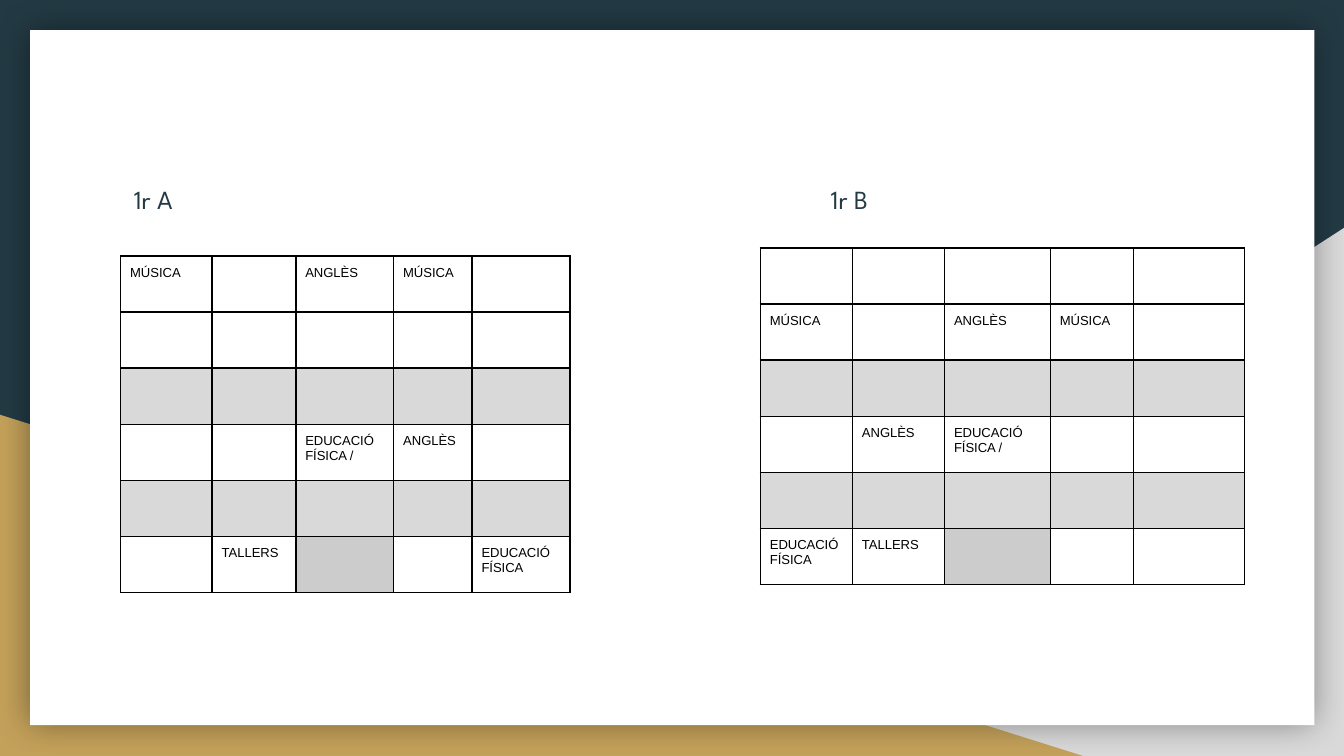
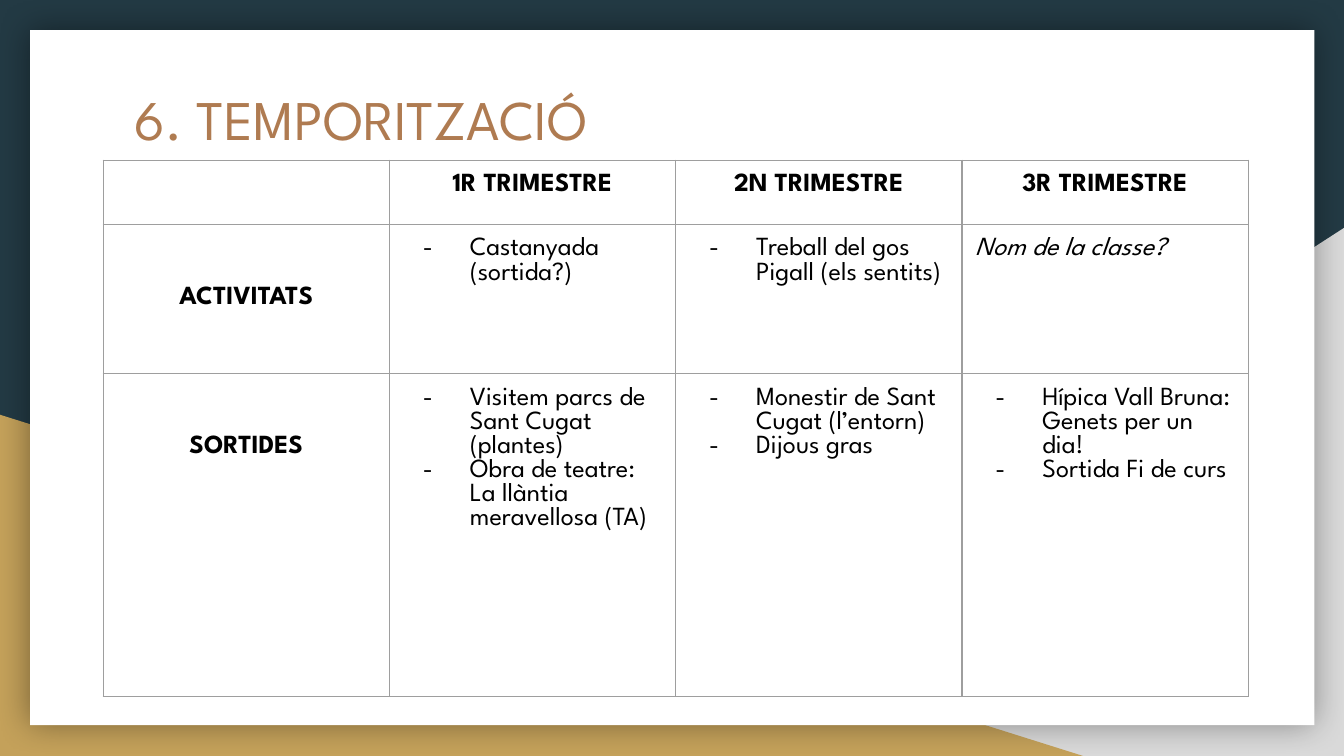
from lxml.etree import SubElement
from pptx import Presentation
from pptx.dml.color import RGBColor
from pptx.enum.shapes import MSO_SHAPE as Shape
from pptx.enum.text import MSO_ANCHOR as Anchor, PP_ALIGN as Align
from pptx.oxml.ns import qn
from pptx.util import Cm, Pt

NAVY = RGBColor(0x23, 0x3A, 0x44)
GOLD = RGBColor(0xC4, 0xA1, 0x5A)
COPPER = RGBColor(0xAF, 0x7B, 0x51)
LIGHT_GREY = RGBColor(0xD9, 0xD9, 0xD9)
MID_GREY = RGBColor(0xCC, 0xCC, 0xCC)
LINE_GREY = RGBColor(0x9E, 0x9E, 0x9E)
WHITE = RGBColor(0xFF, 0xFF, 0xFF)
BLACK = RGBColor(0, 0, 0)
HEADING_FONT = "League Spartan"
TIMETABLE_FONT = "Arial"


def add_color(parent, color):
    return SubElement(parent, qn("a:srgbClr"), val=str(color))


class Deck:
    """Holds the shared style and the slide being filled."""

    def __init__(self):
        self.presentation = Presentation()
        self.presentation.slide_width = Cm(25.4)
        self.presentation.slide_height = Cm(14.29)
        self.slide = None

    def new_slide(self):
        self.slide = self.presentation.slides.add_slide(self.presentation.slide_layouts[6])
        background = self.slide.background.fill
        background.solid()
        background.fore_color.rgb = NAVY
        grey_corner = self.shape(Shape.RIGHT_TRIANGLE, 9.96, 4.31, 15.44, 9.98, LIGHT_GREY)
        grey_corner._element.spPr.find(qn("a:xfrm")).set("flipH", "1")
        self.shape(Shape.RIGHT_TRIANGLE, 0, 7.84, 20.47, 6.45, GOLD)
        card = self.shape(Shape.RECTANGLE, 0.57, 0.57, 24.27, 13.14, WHITE)
        self.soft_shadow(card)

    def shape(self, kind, left, top, width, height, color):
        shape = self.slide.shapes.add_shape(kind, Cm(left), Cm(top), Cm(width), Cm(height))
        shape.shadow.inherit = False
        shape.fill.solid()
        shape.fill.fore_color.rgb = color
        shape.line.fill.background()
        return shape

    def soft_shadow(self, shape):
        effects = shape._element.spPr.find(qn("a:effectLst"))
        shadow = SubElement(effects, qn("a:outerShdw"), blurRad=str(Pt(18)), dist="0",
                            dir="0", algn="ctr", rotWithShape="0")
        SubElement(add_color(shadow, BLACK), qn("a:alpha"), val="40000")

    def run(self, paragraph, text, size, font=HEADING_FONT, color=BLACK, bold=False, italic=False):
        run = paragraph.add_run()
        run.text = text
        run.font.name = font
        run.font.size = Pt(size)
        run.font.color.rgb = color
        run.font.bold = bold
        run.font.italic = italic

    def text(self, text, left, top, width, height, size, color, anchor=Anchor.TOP):
        box = self.slide.shapes.add_textbox(Cm(left), Cm(top), Cm(width), Cm(height))
        frame = box.text_frame
        frame.word_wrap = True
        frame.vertical_anchor = anchor
        frame.margin_left = frame.margin_right = Cm(0.25)
        frame.margin_top = frame.margin_bottom = Cm(0.25)
        self.run(frame.paragraphs[0], text, size, color=color)

    def table(self, left, top, columns, rows, margin, line_color, line_width):
        """Add an empty, unfilled grid; columns and rows are sizes in centimetres."""
        frame = self.slide.shapes.add_table(len(rows), len(columns), Cm(left), Cm(top),
                                            Cm(sum(columns)), Cm(sum(rows)))
        table = frame.table
        table.first_row = table.horz_banding = False
        for column, width in zip(table.columns, columns):
            column.width = Cm(width)
        for row, height in zip(table.rows, rows):
            row.height = Cm(height)
        for cell in table.iter_cells():
            cell.margin_left = cell.margin_right = Cm(margin)
            cell.margin_top = cell.margin_bottom = Cm(margin)
            self.borders(cell, line_color, line_width)
            cell.fill.background()
        return table

    def borders(self, cell, color, width):
        properties = cell._tc.get_or_add_tcPr()
        for side in ("lnL", "lnR", "lnT", "lnB"):
            line = SubElement(properties, qn(f"a:{side}"), w=str(Pt(width)))
            add_color(SubElement(line, qn("a:solidFill")), color)

    def empty_cell(self, cell, size):
        """Keep an empty cell from stretching its row."""
        SubElement(cell.text_frame.paragraphs[0]._p, qn("a:endParaRPr"), sz=str(size * 100))

    def timetable(self, left, top, columns, content):
        """Fill a timetable; a colour in place of a text shades the cell."""
        table = self.table(left, top, columns, [1.06] * len(content), 0.18, BLACK, 1)
        for row, values in enumerate(content):
            for column, value in enumerate(values):
                cell = table.cell(row, column)
                if isinstance(value, RGBColor):
                    cell.fill.solid()
                    cell.fill.fore_color.rgb = value
                    value = ""
                if value:
                    self.run(cell.text_frame.paragraphs[0], value, 7, TIMETABLE_FONT)
                else:
                    self.empty_cell(cell, 7)

    def heading_cell(self, cell, text):
        paragraph = cell.text_frame.paragraphs[0]
        paragraph.alignment = Align.CENTER
        self.run(paragraph, text, 14, bold=True)

    def dash_list(self, cell, items):
        frame = cell.text_frame
        for index, item in enumerate(items):
            paragraph = frame.add_paragraph() if index else frame.paragraphs[0]
            properties = paragraph._p.get_or_add_pPr()
            properties.set("marL", str(Cm(1.27)))
            properties.set("indent", str(Cm(-0.89)))
            add_color(SubElement(properties, qn("a:buClr")), BLACK)
            SubElement(properties, qn("a:buFont"), typeface=HEADING_FONT)
            SubElement(properties, qn("a:buChar"), char="-")
            self.run(paragraph, item, 14)


def add_timetables(deck):
    deck.new_slide()
    break_row = [LIGHT_GREY] * 5
    deck.timetable(2.28, 4.84, [1.73, 1.58, 1.85, 1.48, 1.85], [
        ["MÚSICA", "", "ANGLÈS", "MÚSICA", ""],
        [""] * 5,
        break_row,
        ["", "", "EDUCACIÓ FÍSICA /", "ANGLÈS", ""],
        break_row,
        ["", "TALLERS", MID_GREY, "", "EDUCACIÓ FÍSICA"],
    ])
    deck.timetable(14.37, 4.69, [1.74, 1.74, 2, 1.57, 2.1], [
        [""] * 5,
        ["MÚSICA", "", "ANGLÈS", "MÚSICA", ""],
        break_row,
        ["", "ANGLÈS", "EDUCACIÓ FÍSICA /", "", ""],
        break_row,
        ["EDUCACIÓ FÍSICA", "TALLERS", MID_GREY, "", ""],
    ])
    for group, left in (("1r A", 2.28), ("1r B", 15.45)):
        deck.text(group, left, 3.19, 4.7, 1.12, 14, NAVY, anchor=Anchor.BOTTOM)


def add_schedule(deck):
    deck.new_slide()
    deck.text("6. TEMPORITZACIÓ", 2.3, 1.35, 13.18, 2.64, 30, COPPER)
    table = deck.table(1.95, 3.03, [5.41] * 4, [1.21, 2.82, 6.1], 0.25, LINE_GREY, 0.75)
    deck.empty_cell(table.cell(0, 0), 14)
    for column, term in enumerate(("1R", "2N", "3R"), start=1):
        deck.heading_cell(table.cell(0, column), f"{term} TRIMESTRE")
    for row, heading in enumerate(("ACTIVITATS", "SORTIDES"), start=1):
        cell = table.cell(row, 0)
        cell.margin_top = Cm(1.17)
        deck.heading_cell(cell, heading)
    plans = {
        (1, 1): ["Castanyada (sortida?)"],
        (1, 2): ["Treball del gos Pigall (els sentits)"],
        (2, 1): ["Visitem parcs de Sant Cugat (plantes)",
                 "Obra de teatre: La llàntia meravellosa (TA)"],
        (2, 2): ["Monestir de Sant Cugat (l’entorn)", "Dijous gras"],
        (2, 3): ["Hípica Vall Bruna: Genets per un dia!", "Sortida Fi de curs"],
    }
    for (row, column), items in plans.items():
        deck.dash_list(table.cell(row, column), items)
    class_name = table.cell(1, 3).text_frame.paragraphs[0]
    deck.run(class_name, "Nom de la classe?", 14, italic=True)


def main():
    deck = Deck()
    add_timetables(deck)
    add_schedule(deck)
    deck.presentation.save("out.pptx")


if __name__ == "__main__":
    main()
